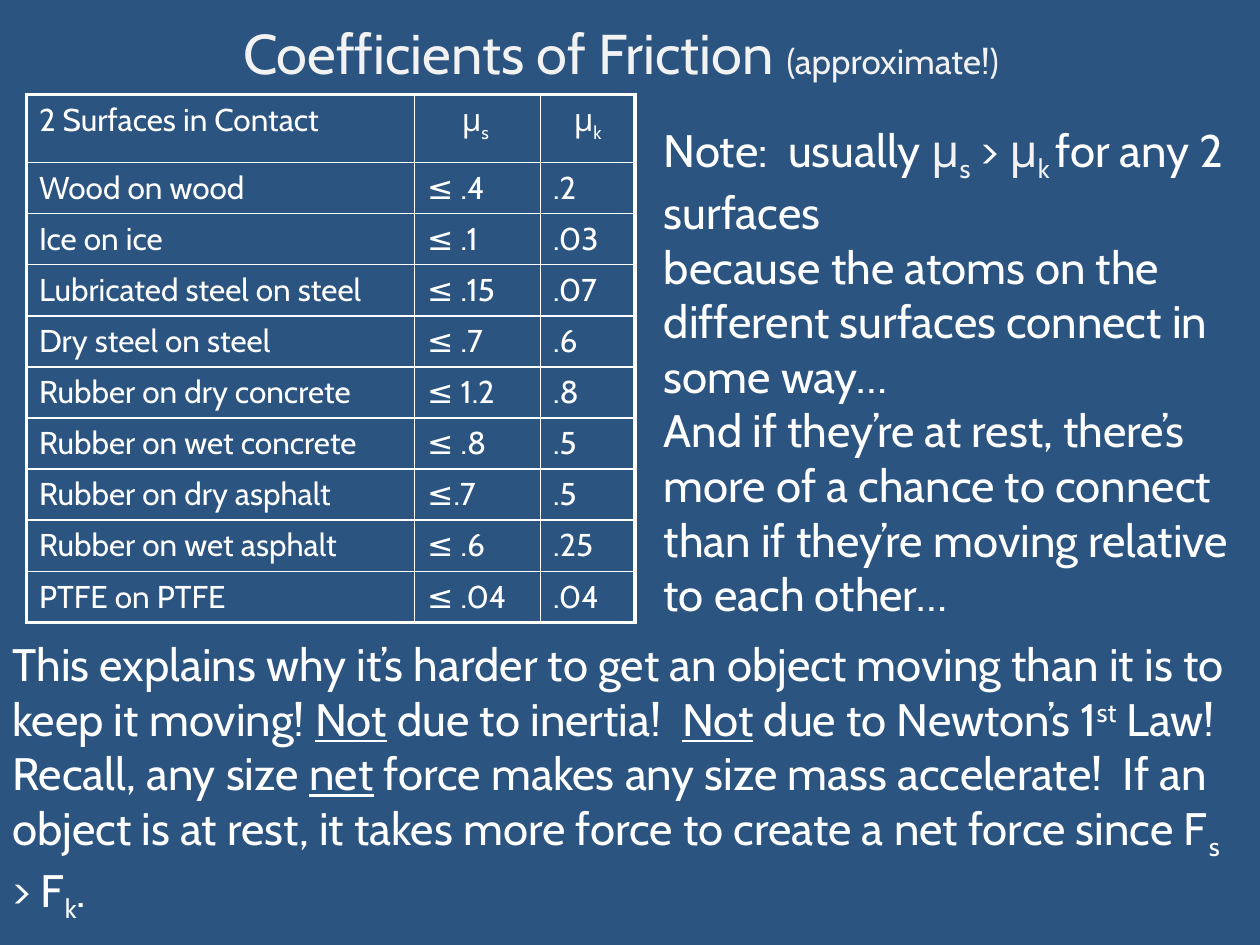
from dataclasses import dataclass

from lxml import etree
from pptx import Presentation
from pptx import util as u
from pptx.dml.color import RGBColor
from pptx.enum import text
from pptx.oxml import ns


@dataclass(frozen=True)
class Theme:
    font: str = "Cabin"
    back: str = "2B5481"
    ink: str = "FFFFFF"
    soft: str = "F2F2F2"
    head: int = 32
    aside: int = 20
    body: int = 26
    cell: int = 18
    thin: float = 1
    thick: float = 2.25


SUB, SUP = -25, 30


def low(word, **style):
    return word, {"base": SUB, **style}


class Deck:
    def __init__(self, theme):
        self.theme = theme
        self.file = Presentation()
        self.file.slide_width = u.Inches(10)
        self.file.slide_height = u.Inches(7.5)
        self.slide = self.file.slides.add_slide(self.file.slide_layouts[5])
        fill = self.slide.background.fill
        fill.solid()
        fill.fore_color.rgb = RGBColor.from_string(theme.back)

    def add_runs(self, para, runs, size, color=None):
        """Add runs, each a plain string or a (string, style) pair."""
        for item in runs:
            words, style = (item, {}) if isinstance(item, str) else item
            run = para.add_run()
            run.text = words
            font = run.font
            font.name = self.theme.font
            font.size = u.Pt(style.get("size", size))
            font.color.rgb = RGBColor.from_string(
                style.get("color", color or self.theme.ink))
            if style.get("line"):
                font.underline = True
            if "base" in style:
                run._r.get_or_add_rPr().set("baseline", str(style["base"] * 1000))

    def place(self, shape, left, top, width, height):
        shape.left, shape.top = u.Inches(left), u.Inches(top)
        shape.width, shape.height = u.Inches(width), u.Inches(height)

    def title(self, runs, *area):
        shape = self.slide.shapes.title
        self.place(shape, *area)
        frame = shape.text_frame
        frame.auto_size = text.MSO_AUTO_SIZE.NONE
        frame.vertical_anchor = text.MSO_ANCHOR.MIDDLE
        para = frame.paragraphs[0]
        para.alignment = text.PP_ALIGN.CENTER
        self.add_runs(para, runs, self.theme.head, self.theme.soft)

    def box(self, paras, *area):
        frame = self.slide.shapes.add_textbox(*map(u.Inches, area)).text_frame
        frame.word_wrap = True
        for i, runs in enumerate(paras):
            para = frame.add_paragraph() if i else frame.paragraphs[0]
            self.add_runs(para, runs, self.theme.body)

    def border(self, cell, widths):
        """Draw the cell's sides; widths are left, right, top, bottom in points."""
        props = cell._tc.get_or_add_tcPr()
        for i, (side, width) in enumerate(zip("LRTB", widths)):
            line = etree.Element(ns.qn(f"a:ln{side}"), w=str(u.Pt(width)))
            fill = etree.SubElement(line, ns.qn("a:solidFill"))
            etree.SubElement(fill, ns.qn("a:srgbClr"), val=self.theme.ink)
            props.insert(i, line)

    def table(self, rows, left, top, cols, highs):
        frame = self.slide.shapes.add_table(
            len(rows), len(cols), u.Inches(left), u.Inches(top),
            u.Inches(sum(cols)), u.Inches(sum(highs)))
        grid = frame.table
        grid.first_row = grid.horz_banding = False
        for col, width in zip(grid.columns, cols):
            col.width = u.Inches(width)
        for row, high in zip(grid.rows, highs):
            row.height = u.Inches(high)
        end, last = len(rows) - 1, len(cols) - 1
        for r, row in enumerate(rows):
            for c, runs in enumerate(row):
                cell = grid.cell(r, c)
                cell.fill.background()
                para = cell.text_frame.paragraphs[0]
                if r == 0 and c > 0:
                    para.alignment = text.PP_ALIGN.CENTER
                self.add_runs(para, runs, self.theme.cell)
                edges = (c == 0, c == last, r == 0, r == end)
                self.border(cell, [self.theme.thick if edge else self.theme.thin
                                   for edge in edges])


HEADS = [["2 Surfaces in Contact"], ["μ", low("s ")], ["μ", low("k")]]
PAIRS = [
    ("Wood on wood", "≤ .4", ".2"),
    ("Ice on ice", "≤ .1", ".03"),
    ("Lubricated steel on steel", "≤ .15", ".07"),
    ("Dry steel on steel", "≤ .7", ".6"),
    ("Rubber on dry concrete", "≤ 1.2", ".8"),
    ("Rubber on wet concrete", "≤ .8", ".5"),
    ("Rubber on dry asphalt", "≤.7", ".5"),
    ("Rubber on wet asphalt", "≤ .6", ".25"),
    ("PTFE on PTFE", "≤ .04", ".04"),
]


def main():
    theme = Theme()
    deck = Deck(theme)
    mu = ("μ", {"color": theme.soft})
    under = {"line": True}

    deck.title(["Coefficients of Friction ",
                ("(approximate!) ", {"size": theme.aside})],
               1.67, 0, 6.58, 0.83)

    rows = [HEADS] + [[[word] for word in pair] for pair in PAIRS]
    deck.table(rows, 0.21, 0.75, [3.08, 1, 0.75], [0.54] + [0.4] * len(PAIRS))

    deck.box([
        ["Note:  usually ", mu, low("s", color=theme.soft), " > ",
         mu, low("k ", color=theme.soft), "for any 2 surfaces"],
        ["because the atoms on the different surfaces connect in some way…"],
        ["And if they’re at rest, there’s more of a chance to connect than "
         "if they’re moving relative to each other…"],
    ], 5.17, 0.92, 4.83, 4.48)

    deck.box([[
        "This explains why it’s harder to get an object moving than it is to "
        "keep it moving! ",
        ("Not", under), " due to inertia!  ",
        ("Not", under), " due to Newton’s 1", ("st", {"base": SUP}),
        " Law!  Recall, any size ", ("net", under),
        " force makes any size mass accelerate!  If an object is at rest, "
        "it takes more force to create a net force since F",
        low("s"), " > F", low("k"), ".",
    ]], 0, 5, 10, 2.29)

    deck.file.save("out.pptx")


if __name__ == "__main__":
    main()
